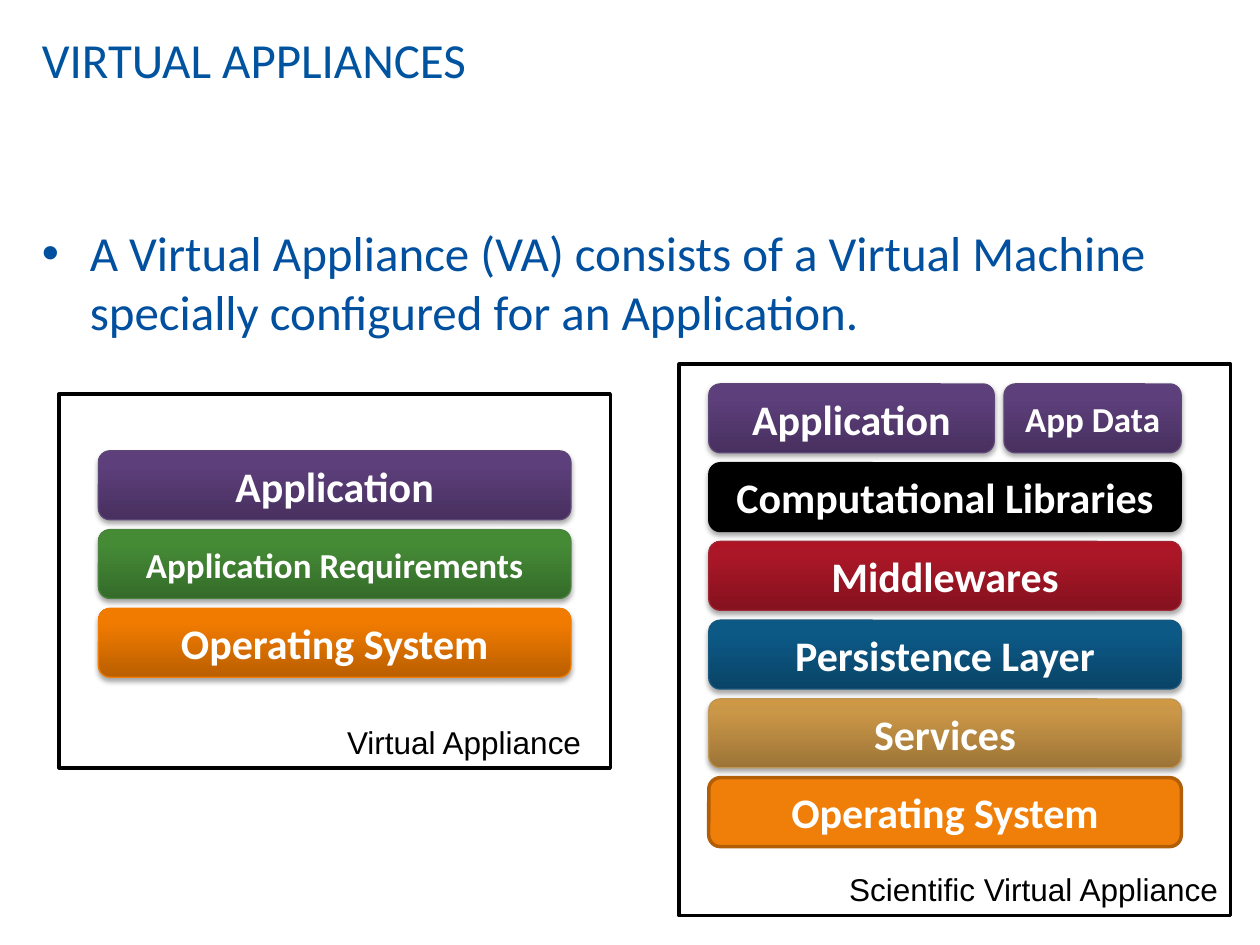
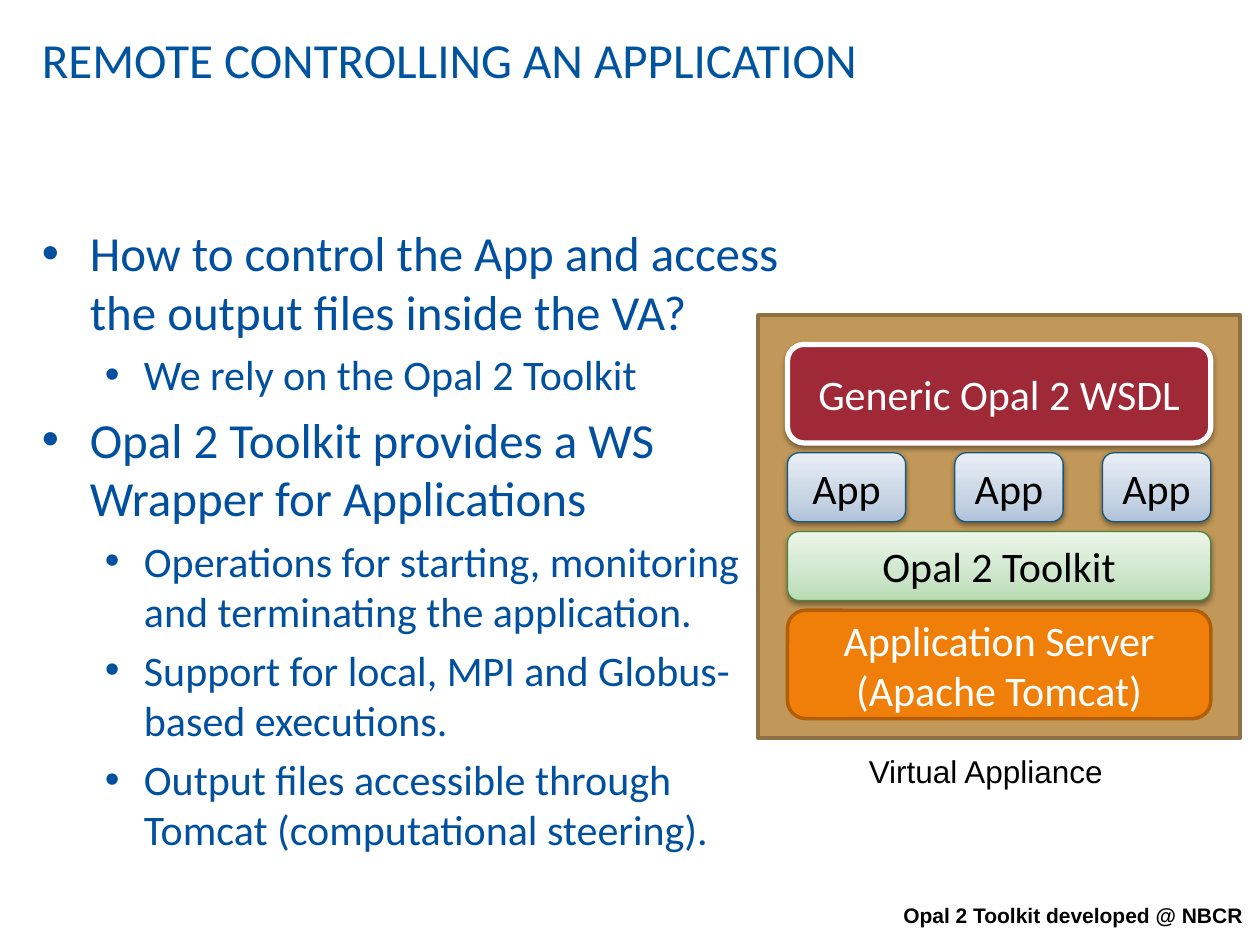
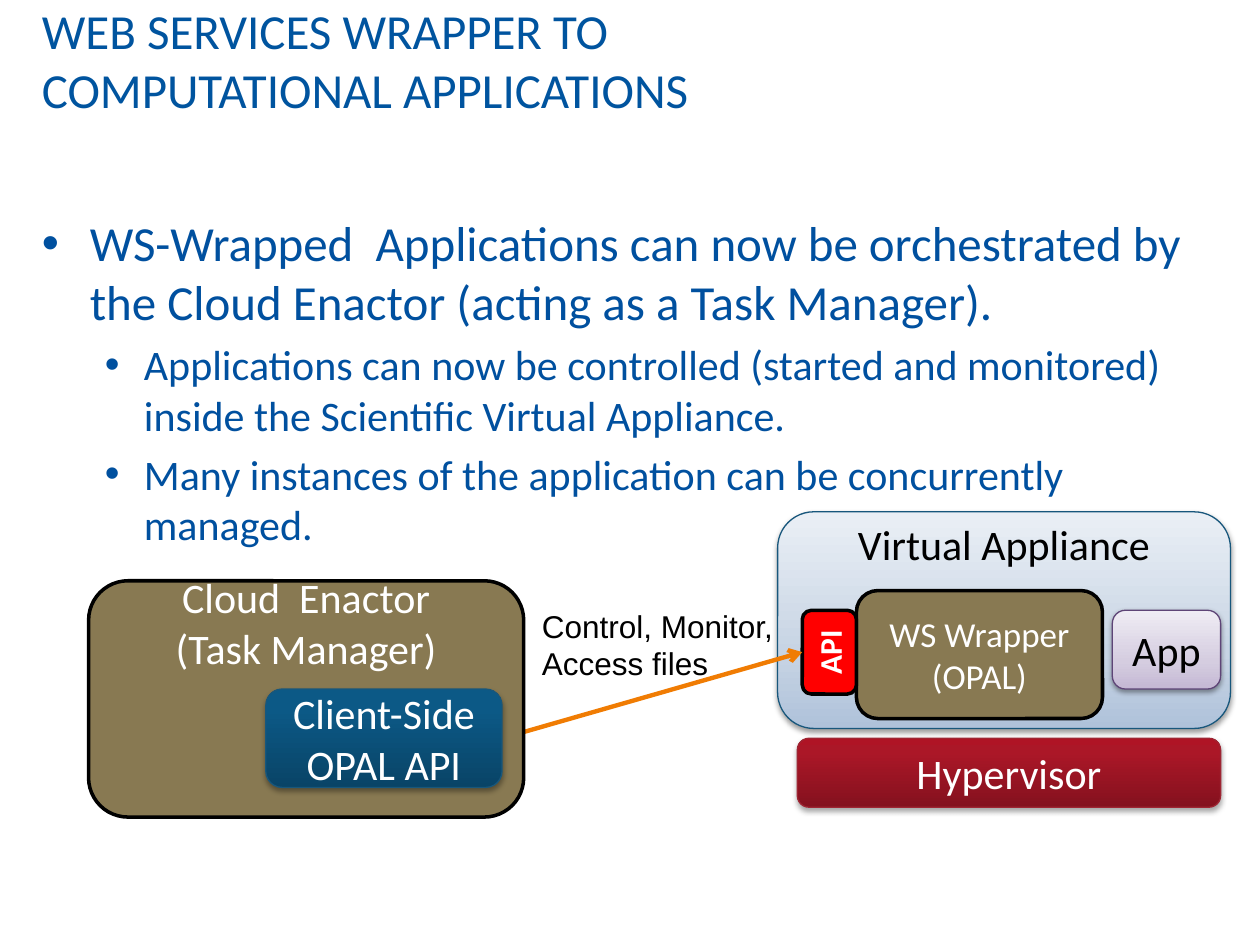
from pptx import Presentation
from pptx.dml.color import RGBColor
from pptx.enum.shapes import MSO_CONNECTOR, MSO_SHAPE
from pptx.enum.text import MSO_ANCHOR, PP_ALIGN
from pptx.oxml.ns import qn
from pptx.util import Inches, Pt
from lxml.etree import SubElement

COLUMNS = 128
UNIT = Inches(10) / COLUMNS  # square grid, 128 columns by 96 rows

WHITE = RGBColor(0xFF, 0xFF, 0xFF)
BLACK = RGBColor(0x00, 0x00, 0x00)
TITLE_BLUE = RGBColor(0x00, 0x54, 0x9F)
BODY_BLUE = RGBColor(0x00, 0x50, 0x9F)
ORANGE = RGBColor(0xF0, 0x7F, 0x09)
ORANGE_EDGE = RGBColor(0xB2, 0x5E, 0x07)
ARROW_ORANGE = RGBColor(0xF0, 0x7C, 0x03)
CRIMSON = RGBColor(0x9F, 0x29, 0x36)
SAND = RGBColor(0xC1, 0x98, 0x59)
SAND_EDGE = RGBColor(0x8F, 0x70, 0x42)
OLIVE = RGBColor(0x88, 0x79, 0x52)
RED = RGBColor(0xFF, 0x00, 0x00)

PURPLE_EDGE = RGBColor(0x5E, 0x45, 0x77)
GREEN_EDGE = RGBColor(0x4B, 0x84, 0x3F)
BLUE_EDGE = RGBColor(0x18, 0x57, 0x7C)
RED_EDGE = RGBColor(0x9E, 0x25, 0x33)
GOLD_EDGE = RGBColor(0xBF, 0x95, 0x54)

# Gradients run from bottom to top; dark ones turn at 80 %, pale ones at 35 %.
PURPLE = (RGBColor(0x48, 0x30, 0x5F), RGBColor(0x5D, 0x3F, 0x7B), RGBColor(0x5D, 0x3E, 0x7D))
GREEN = (RGBColor(0x35, 0x6B, 0x2A), RGBColor(0x45, 0x8B, 0x36), RGBColor(0x45, 0x8D, 0x35))
DEEP_ORANGE = (RGBColor(0xBA, 0x5F, 0x00), RGBColor(0xF1, 0x7B, 0x00), RGBColor(0xF2, 0x7C, 0x00))
DEEP_RED = (RGBColor(0x84, 0x11, 0x1E), RGBColor(0xAB, 0x17, 0x27), RGBColor(0xAF, 0x14, 0x25))
BLUE = (RGBColor(0x09, 0x44, 0x67), RGBColor(0x0C, 0x59, 0x86), RGBColor(0x0A, 0x5A, 0x89))
GOLD = (RGBColor(0x9C, 0x74, 0x37), RGBColor(0xCA, 0x96, 0x47), RGBColor(0xCE, 0x98, 0x45))
PALE_GREEN = (RGBColor(0xB8, 0xDC, 0xB3), RGBColor(0xCD, 0xE5, 0xCA), RGBColor(0xEC, 0xF6, 0xEA))
PALE_BLUE = (RGBColor(0xAF, 0xC2, 0xDA), RGBColor(0xC7, 0xD4, 0xE4), RGBColor(0xEA, 0xEF, 0xF5))
PALE_PURPLE = (RGBColor(0xC4, 0xB8, 0xD4), RGBColor(0xD5, 0xCD, 0xE0), RGBColor(0xEF, 0xEC, 0xF4))

BAR_HEIGHT = 7
BAR_STEP = 8
HEADING_LIFT = Inches(1.27)  # bottom inset that lifts a heading by three lines


def grid(*units):
    return [round(u * UNIT) for u in units]


def write(tf, text, size=24, color=BLACK, font="Calibri", bold=False,
          align=PP_ALIGN.LEFT, anchor=MSO_ANCHOR.TOP, wrap=True):
    """Fill a text frame, one paragraph for each line of text."""
    tf.word_wrap = wrap
    tf.vertical_anchor = anchor
    for i, line in enumerate(text.split("\n")):
        p = tf.add_paragraph() if i else tf.paragraphs[0]
        p.alignment = align
        r = p.add_run()
        r.text = line
        r.font.name, r.font.size, r.font.bold = font, Pt(size), bold
        r.font.color.rgb = color


def add_text(slide, at, text, **style):
    sp = slide.shapes.add_textbox(*grid(*at))
    write(sp.text_frame, text, **style)


def add_label(slide, at, text, size=18, bold=False):
    add_text(slide, at, text, size=size, bold=bold, font="Arial", wrap=False)


def add_bullets(slide, at, items):
    """Items are (level, text) pairs."""
    tf = slide.shapes.add_textbox(*grid(*at)).text_frame
    tf.word_wrap = True
    for i, (level, text) in enumerate(items):
        p = tf.add_paragraph() if i else tf.paragraphs[0]
        size, left, hang = ((28, 0.38, 0.38), (24, 0.81, 0.31))[level]
        pPr = p._p.get_or_add_pPr()
        pPr.set("marL", str(Inches(left)))
        pPr.set("indent", str(-Inches(hang)))
        SubElement(pPr, qn("a:buFont")).set("typeface", "Arial")
        SubElement(pPr, qn("a:buChar")).set("char", "•")
        p.level = level
        if i:
            p.space_before = Pt(0.2 * size)
        r = p.add_run()
        r.text = text
        r.font.name, r.font.size = "Calibri", Pt(size)
        r.font.color.rgb = BODY_BLUE


def set_gradient(sp, colors, middle):
    sp.fill.gradient()
    sp.fill.gradient_angle = 90
    stops = sp._element.spPr.find(qn("a:gradFill")).find(qn("a:gsLst"))
    for old in list(stops):
        stops.remove(old)
    for pos, color in zip((0, middle, 100), colors):
        gs = SubElement(stops, qn("a:gs"), pos=str(pos * 1000))
        SubElement(gs, qn("a:srgbClr"), val=str(color))


def set_shadow(sp, opacity, distance):
    effects = sp._element.spPr.find(qn("a:effectLst"))
    shadow = SubElement(effects, qn("a:outerShdw"), blurRad=str(Pt(3.1)),
                        dist=str(Pt(distance)), dir="5400000", rotWithShape="0")
    color = SubElement(shadow, qn("a:srgbClr"), val=str(BLACK))
    SubElement(color, qn("a:alpha"), val=str(opacity * 1000))


def add_box(slide, at, edge, fill=None, width=2, preset=MSO_SHAPE.ROUNDED_RECTANGLE):
    sp = slide.shapes.add_shape(preset, *grid(*at))
    sp.shadow.inherit = False
    if fill:
        sp.fill.solid()
        sp.fill.fore_color.rgb = fill
    else:
        sp.fill.background()
    sp.line.color.rgb = edge
    sp.line.width = Pt(width)
    return sp


def add_frame(slide, at, edge=BLACK, fill=None):
    add_box(slide, at, edge, fill, preset=MSO_SHAPE.RECTANGLE)


def add_block(slide, at, text, fill, edge, width=2, color=WHITE, size=24, bold=False):
    """Flat rounded block with centred text."""
    sp = add_box(slide, at, edge, fill, width)
    write(sp.text_frame, text, size=size, color=color, bold=bold,
          align=PP_ALIGN.CENTER, anchor=MSO_ANCHOR.MIDDLE)
    return sp


def add_dark(slide, at, text, colors, edge, **style):
    sp = add_block(slide, at, text, None, edge, width=0.75, **style)
    set_gradient(sp, colors, 80)
    set_shadow(sp, 35, 1.8)
    return sp


def add_pale(slide, at, text, colors, edge):
    sp = add_block(slide, at, text, None, edge, width=0.75, color=BLACK)
    set_gradient(sp, colors, 35)
    set_shadow(sp, 38, 1.6)
    return sp


def add_arrow(slide, begin, begin_site, end, end_site, tip):
    """Join two shapes; tip is the grid point of the arrowhead on a turned shape."""
    line = slide.shapes.add_connector(MSO_CONNECTOR.STRAIGHT, 0, 0, 0, 0)
    line.begin_connect(begin, begin_site)
    line.end_connect(end, end_site)
    line.end_x, line.end_y = grid(*tip)
    line.line.color.rgb = ARROW_ORANGE
    line.line.width = Pt(2.5)
    SubElement(line.line._get_or_add_ln(), qn("a:tailEnd"), type="arrow")
    SubElement(line._element.spPr, qn("a:effectLst"))
    return line


def new_slide(prs, title):
    slide = prs.slides.add_slide(prs.slide_layouts[6])
    add_text(slide, (3, 0, 87.5, 12), title, size=28, color=TITLE_BLUE,
             anchor=MSO_ANCHOR.MIDDLE)
    return slide


def virtual_appliances(prs):
    slide = new_slide(prs, "VIRTUAL APPLIANCES")
    add_bullets(slide, (3, 22, 122, 16), [
        (0, "A Virtual Appliance (VA) consists of a Virtual Machine specially "
            "configured for an Application."),
    ])

    layers = [
        ("Application", PURPLE, PURPLE_EDGE, 24),
        ("Application Requirements", GREEN, GREEN_EDGE, 20),
        ("Operating System", DEEP_ORANGE, ARROW_ORANGE, 24),
    ]
    for row, (text, colors, edge, size) in enumerate(layers):
        add_dark(slide, (10, 45.8 + row * BAR_STEP, 48, BAR_HEIGHT), text, colors, edge,
                 size=size, bold=True)
    add_label(slide, (34, 72.8, 26.6, 5.1), "Virtual Appliance")
    add_frame(slide, (6, 40, 56, 38))

    left, top = 72, 39
    add_dark(slide, (left, top, 29, BAR_HEIGHT), "Application", PURPLE, PURPLE_EDGE, bold=True)
    add_dark(slide, (left + 30, top, 18, BAR_HEIGHT), "App Data", PURPLE, PURPLE_EDGE,
             size=20, bold=True)
    layers = [
        ("Computational Libraries", (BLACK,) * 3, BLACK),
        ("Middlewares", DEEP_RED, RED_EDGE),
        ("Persistence Layer", BLUE, BLUE_EDGE),
        ("Services", GOLD, GOLD_EDGE),
    ]
    for row, (text, colors, edge) in enumerate(layers, 1):
        add_dark(slide, (left, top + row * BAR_STEP, 48, BAR_HEIGHT), text, colors, edge,
                 bold=True)
    add_block(slide, (left, top + 5 * BAR_STEP, 48, BAR_HEIGHT), "Operating System",
              ORANGE, ORANGE_EDGE, bold=True)
    add_label(slide, (85, 87.8, 40.4, 5.1), "Scientific Virtual Appliance")
    add_frame(slide, (69, 37, 56, 56))


def remote_control(prs):
    slide = new_slide(prs, "REMOTE CONTROLLING AN APPLICATION")
    add_bullets(slide, (3, 22, 79, 21), [
        (0, "How to control the App and access the output files inside the VA?"),
        (1, "We rely on the Opal 2 Toolkit"),
        (0, "Opal 2 Toolkit provides a WS Wrapper for Applications"),
        (1, "Operations for starting, monitoring and terminating the application."),
        (1, "Support for local, MPI and Globus-based executions."),
        (1, "Output files accessible through Tomcat (computational steering)."),
    ])
    add_frame(slide, (77, 32, 49, 43), SAND_EDGE, SAND)
    add_block(slide, (80, 62, 43, 11), "Application Server (Apache Tomcat)", ORANGE, ORANGE_EDGE)
    add_pale(slide, (80, 54, 43, BAR_HEIGHT), "Opal 2 Toolkit", PALE_GREEN, GREEN_EDGE)
    wsdl = add_block(slide, (80, 35, 43, 10), "Generic Opal 2 WSDL", CRIMSON, WHITE, width=3)
    set_shadow(wsdl, 38, 1.6)
    for left, width in ((80, 12), (97, 11), (112, 11)):
        add_pale(slide, (left, 46, width, BAR_HEIGHT), "App", PALE_BLUE, BLUE_EDGE)
    add_label(slide, (87, 75.8, 26.6, 5.1), "Virtual Appliance")
    add_label(slide, (90.5, 91.1, 37.5, 3.8), "Opal 2 Toolkit developed @ NBCR", size=12, bold=True)


def web_services_wrapper(prs):
    slide = new_slide(prs, "WEB SERVICES WRAPPER TO COMPUTATIONAL APPLICATIONS")
    add_bullets(slide, (3, 21, 120, 37), [
        (0, "WS-Wrapped  Applications can now be orchestrated by the Cloud Enactor "
            "(acting as a Task Manager)."),
        (1, "Applications can now be controlled (started and monitored) inside the "
            "Scientific Virtual Appliance."),
        (1, "Many instances of the application can be concurrently managed."),
    ])
    add_dark(slide, (81, 75, 43, BAR_HEIGHT), "Hypervisor", DEEP_RED, RED_EDGE)
    appliance = add_pale(slide, (79, 52, 46, 22), "Virtual Appliance", PALE_BLUE, BLUE_EDGE)
    add_pale(slide, (113, 62, 11, 8), "App", PALE_PURPLE, PURPLE_EDGE)
    add_block(slide, (87, 60, 25, 13), "WS Wrapper (OPAL)", OLIVE, BLACK, size=20)
    api = add_block(slide, (80, 63.5, 8.5, 5.5), "API", RED, BLACK, size=18, bold=True)
    api.rotation = 270

    enactor = add_block(slide, (9, 59, 44.2, 24), "Cloud  Enactor\n(Task Manager)", OLIVE, BLACK)
    for sp in (appliance, enactor):
        sp.text_frame.margin_bottom = HEADING_LIFT
    client = add_dark(slide, (27, 70, 24, 10), "Client-Side OPAL API", BLUE, BLUE_EDGE)
    arrow = add_arrow(slide, client, 3, api, 0, tip=(81.5, 66.25))
    enactor._element.addprevious(arrow._element)  # the arrow leaves from behind the enactor
    add_label(slide, (53.8, 61, 26.2, 9.1), "Control, Monitor,\nAccess files")


def main():
    prs = Presentation()
    prs.slide_width, prs.slide_height = Inches(10), Inches(7.5)
    virtual_appliances(prs)
    remote_control(prs)
    web_services_wrapper(prs)
    prs.save("out.pptx")


if __name__ == "__main__":
    main()
